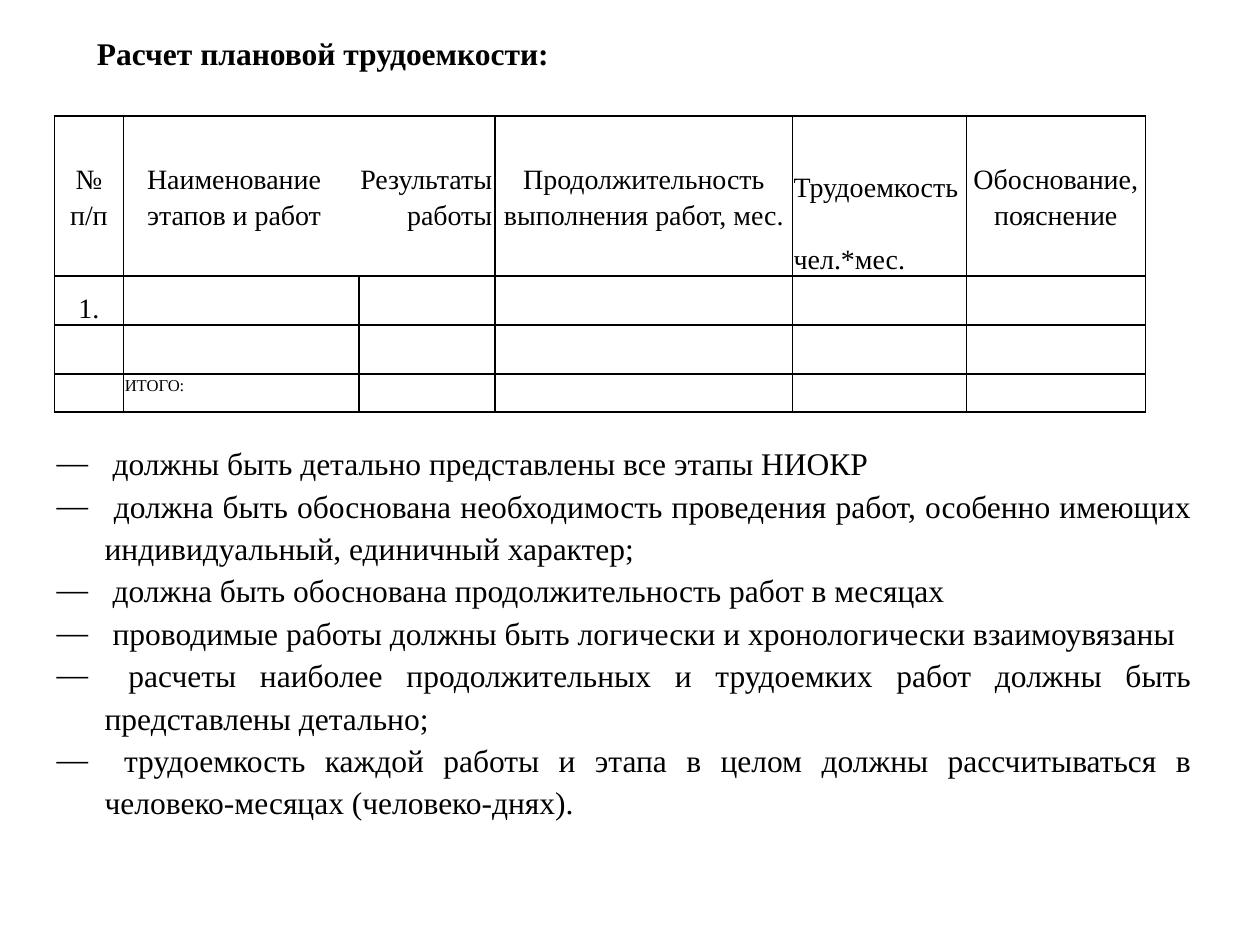
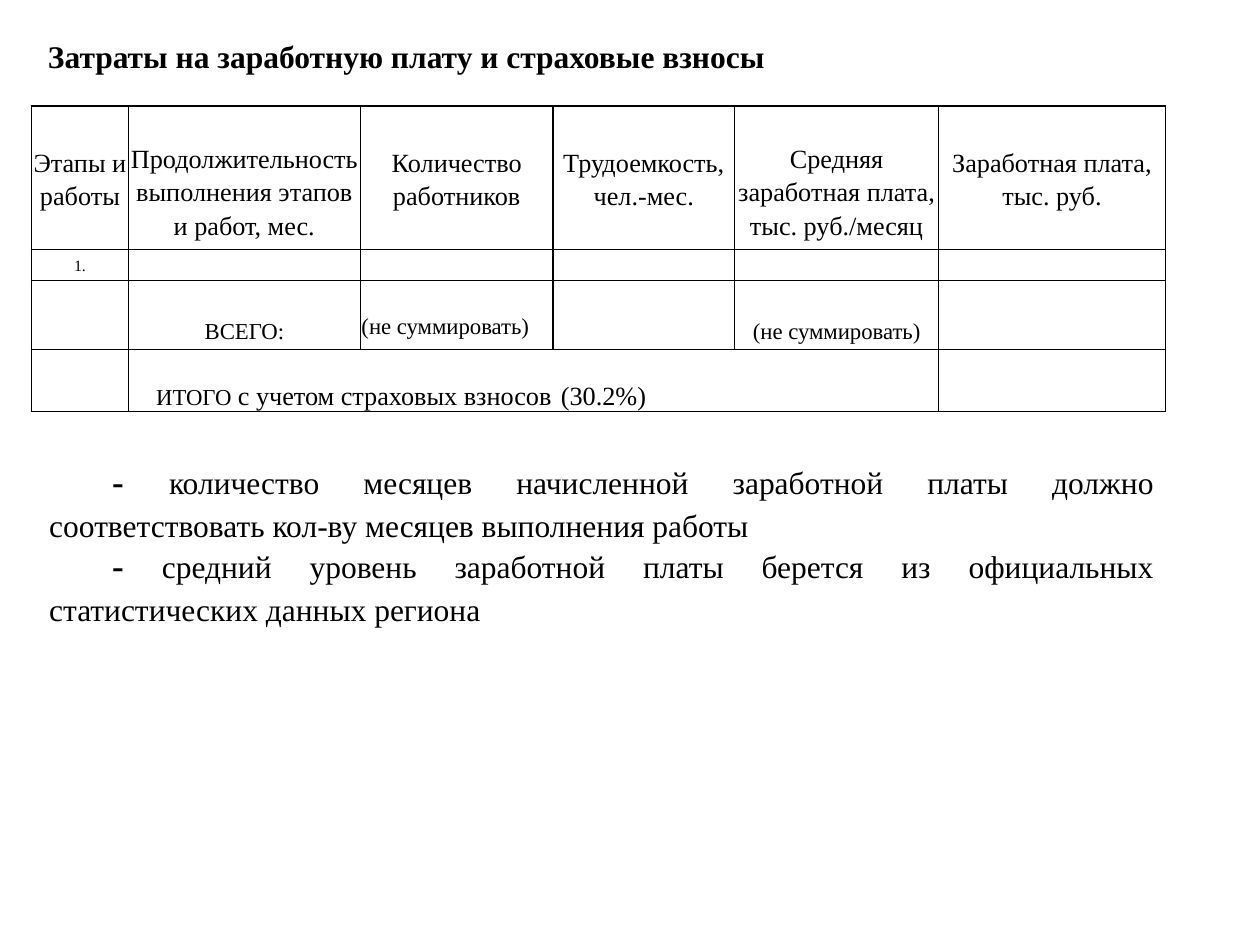
import pptx
import pptx.util
import pptx.dml.color
import pptx.enum.text
import pptx.oxml.ns
import lxml.etree

Pt = pptx.util.Pt
qn = pptx.oxml.ns.qn
ALIGN = pptx.enum.text.PP_ALIGN
ANCHOR = pptx.enum.text.MSO_ANCHOR
GROW = pptx.enum.text.MSO_AUTO_SIZE.SHAPE_TO_FIT_TEXT

FONT = "Times New Roman"
COLORS = {"text": "000000", "border": "000000", "cell": "FFFFFF"}
TEXT_SIZE = 18
LINE = 24.2
EMPTY_SIZE = 9

SLIDES = [
    {
        "title": "Расчет плановой трудоемкости:",
        "title_box": (48.2, 24.5, 275.8, 20.2),
        "title_line": 13,
        "title_wrap": False,
        "table": {
            "at": (31, 66.2),
            "cols": [39.6, 134.6, 77.8, 169.9, 99.4, 102.2],
            "rows": [91.4, 28.1, 28.1, 21.6],
            "size": 16,
            "merges": [(0, 1, 2)],
            "open": {},
            "cells": {
                (0, 0): {"lines": ["№ п/п"]},
                (0, 1): {"lines": ["\tНаименование\tРезультаты", "\tэтапов и работ\tработы"],
                         "align": ALIGN.LEFT, "tabs": [("ctr", 62.5), ("r", 210)]},
                (0, 3): {"lines": ["Продолжительность выполнения работ, мес."]},
                (0, 4): {"lines": ["Трудоемкость", "чел.*мес."], "align": ALIGN.LEFT,
                         "anchor": ANCHOR.BOTTOM, "gap": 21},
                (0, 5): {"lines": ["Обоснование,", "пояснение"]},
                (1, 0): {"lines": ["1."], "anchor": ANCHOR.BOTTOM},
                (3, 1): {"lines": ["ИТОГО:"], "align": ALIGN.LEFT,
                         "anchor": ANCHOR.TOP, "size": 9.5},
            },
        },
        "body_box": (25.2, 247.7, 663.1, 225.4),
        "indent": (27.4, -27.4),
        "bullet": "—",
        "body": [
            [(" должны быть детально представлены все этапы НИОКР", TEXT_SIZE, False)],
            [(" должна быть обоснована необходимость проведения работ, особенно имеющих "
              "индивидуальный, единичный характер;", TEXT_SIZE, False)],
            [(" должна быть обоснована продолжительность работ в месяцах", TEXT_SIZE, False)],
            [(" проводимые работы должны быть логически и хронологически взаимоувязаны",
              TEXT_SIZE, False)],
            [(" расчеты наиболее продолжительных и трудоемких работ должны быть "
              "представлены детально;", TEXT_SIZE, False)],
            [(" трудоемкость каждой работы и этапа в целом должны рассчитываться в "
              "человеко-месяцах (человеко-днях).", TEXT_SIZE, False)],
        ],
    },
    {
        "title": "Затраты на заработную плату и страховые взносы",
        "title_box": (20.2, 15.1, 550.1, 31.7),
        "title_line": LINE,
        "title_wrap": True,
        "table": {
            "at": (18, 60.5),
            "cols": [55.4, 132.5, 110.2, 103.7, 116.6, 129.6],
            "rows": [82, 17.7, 39.4, 35.6],
            "size": 15,
            "merges": [(3, 1, 2)],
            "open": {(3, 1): "R", (3, 2): "R", (3, 3): "LR", (3, 4): "L"},
            "cells": {
                (0, 0): {"lines": ["Этапы и работы"]},
                (0, 1): {"lines": ["Продолжительность выполнения этапов и работ, мес."],
                         "anchor": ANCHOR.TOP, "top": 20},
                (0, 2): {"lines": ["Количество работников"]},
                (0, 3): {"lines": ["Трудоемкость,", "чел.-мес."]},
                (0, 4): {"lines": ["Средняя заработная плата, тыс. руб./месяц"],
                         "anchor": ANCHOR.TOP, "top": 20},
                (0, 5): {"lines": ["Заработная плата, тыс. руб."]},
                (1, 0): {"lines": ["1."], "size": 9},
                (2, 1): {"lines": ["ВСЕГО:"], "size": 13, "top": 17},
                (2, 2): {"lines": ["(не суммировать)"], "size": 13, "top": 17,
                         "align": ALIGN.LEFT, "anchor": ANCHOR.TOP},
                (2, 4): {"lines": ["(не суммировать)"], "size": 13, "top": 17},
                (3, 1): {"lines": [[("ИТОГО", 13, False),
                                    (" с учетом страховых взносов", 15, False)]],
                         "align": ALIGN.RIGHT, "anchor": ANCHOR.BOTTOM},
                (3, 3): {"lines": [" (30.2%)"], "align": ALIGN.LEFT, "anchor": ANCHOR.BOTTOM},
            },
        },
        "body_box": (20.2, 258.5, 646.6, 104.4),
        "indent": (0.7, 36),
        "bullet": None,
        "body": [
            [("- ", 20, True),
             ("количество месяцев начисленной заработной платы должно соответствовать "
              "кол-ву месяцев выполнения работы", TEXT_SIZE, False)],
            [("-", 20, True),
             (" средний уровень заработной платы берется из официальных статистических "
              "данных региона", TEXT_SIZE, False)],
        ],
    },
]


def rgb(name):
    return pptx.dml.color.RGBColor.from_string(COLORS[name])


def sub(parent, tag, **attrs):
    return lxml.etree.SubElement(parent, qn(tag), attrs)


def add_paragraph(tf, i, runs, align, line, before=0):
    p = tf.paragraphs[0] if i == 0 else tf.add_paragraph()
    p.alignment = align
    p.line_spacing = line
    p.space_before = Pt(before)
    for text, size, bold in runs:
        r = p.add_run()
        r.text = text
        r.font.name = FONT
        r.font.size = Pt(size)
        r.font.bold = bold
        r.font.color.rgb = rgb("text")
    return p


def place(sp, box, wrap=True):
    sp.left, sp.top, sp.width, sp.height = map(Pt, box)
    tf = sp.text_frame
    tf.word_wrap = wrap
    tf.auto_size = GROW
    tf.vertical_anchor = ANCHOR.TOP
    return tf


def add_title(s, data):
    tf = place(s.shapes.title, data["title_box"], data["title_wrap"])
    add_paragraph(tf, 0, [(data["title"], TEXT_SIZE, True)], ALIGN.LEFT, Pt(data["title_line"]))


def add_body(s, data):
    tf = place(s.placeholders[1], data["body_box"])
    margin, first = data["indent"]
    for i, runs in enumerate(data["body"]):
        p = add_paragraph(tf, i, runs, ALIGN.JUSTIFY, Pt(LINE))
        pPr = p._p.get_or_add_pPr()
        pPr.set("marL", str(Pt(margin)))
        pPr.set("indent", str(Pt(first)))
        if data["bullet"]:
            sub(sub(pPr, "a:buClr"), "a:srgbClr", val=COLORS["text"])
            sub(pPr, "a:buFont", typeface=FONT)
            sub(pPr, "a:buChar", char=data["bullet"])
        else:
            sub(pPr, "a:buNone")


def format_cell(cell, open_sides):
    tcPr = cell._tc.get_or_add_tcPr()
    for side in "LRTB":
        ln = sub(tcPr, "a:ln" + side, w=str(Pt(1)))
        if side in open_sides:
            sub(ln, "a:noFill")
        else:
            sub(sub(ln, "a:solidFill"), "a:srgbClr", val=COLORS["border"])
    cell.fill.solid()
    cell.fill.fore_color.rgb = rgb("cell")
    cell.margin_left = cell.margin_right = Pt(0.7)
    cell.margin_top = cell.margin_bottom = 0


def fill_cell(cell, content, size):
    cell.vertical_anchor = content.get("anchor", ANCHOR.MIDDLE)
    cell.margin_top = Pt(content.get("top", 0))
    size = content.get("size", size)
    for i, line in enumerate(content["lines"]):
        runs = [(line, size, False)] if isinstance(line, str) else line
        before = content.get("gap", 0) if i else 0
        p = add_paragraph(cell.text_frame, i, runs,
                          content.get("align", ALIGN.CENTER), 1.15, before)
        if "tabs" in content:
            tabs = sub(p._p.get_or_add_pPr(), "a:tabLst")
            for kind, pos in content["tabs"]:
                sub(tabs, "a:tab", pos=str(Pt(pos)), algn=kind)


def add_grid(s, data):
    cols, rows = data["cols"], data["rows"]
    left, top = data["at"]
    tbl = s.shapes.add_table(len(rows), len(cols), Pt(left), Pt(top),
                             Pt(sum(cols)), Pt(sum(rows))).table
    tbl.first_row = tbl.horz_banding = False
    for col, width in zip(tbl.columns, cols):
        col.width = Pt(width)
    for row, height in zip(tbl.rows, rows):
        row.height = Pt(height)
    for row, first, last in data["merges"]:
        tbl.cell(row, first).merge(tbl.cell(row, last))
    for i in range(len(rows)):
        for j in range(len(cols)):
            cell = tbl.cell(i, j)
            format_cell(cell, data["open"].get((i, j), ""))
            if (i, j) in data["cells"]:
                fill_cell(cell, data["cells"][i, j], data["size"])
            else:
                sub(cell.text_frame.paragraphs[0]._p, "a:endParaRPr", sz=str(EMPTY_SIZE * 100))


def main():
    prs = pptx.Presentation()
    prs.slide_width, prs.slide_height = Pt(720), Pt(540)
    for data in SLIDES:
        s = prs.slides.add_slide(prs.slide_layouts[1])
        add_title(s, data)
        add_grid(s, data["table"])
        add_body(s, data)
    prs.save("out.pptx")


if __name__ == "__main__":
    main()
